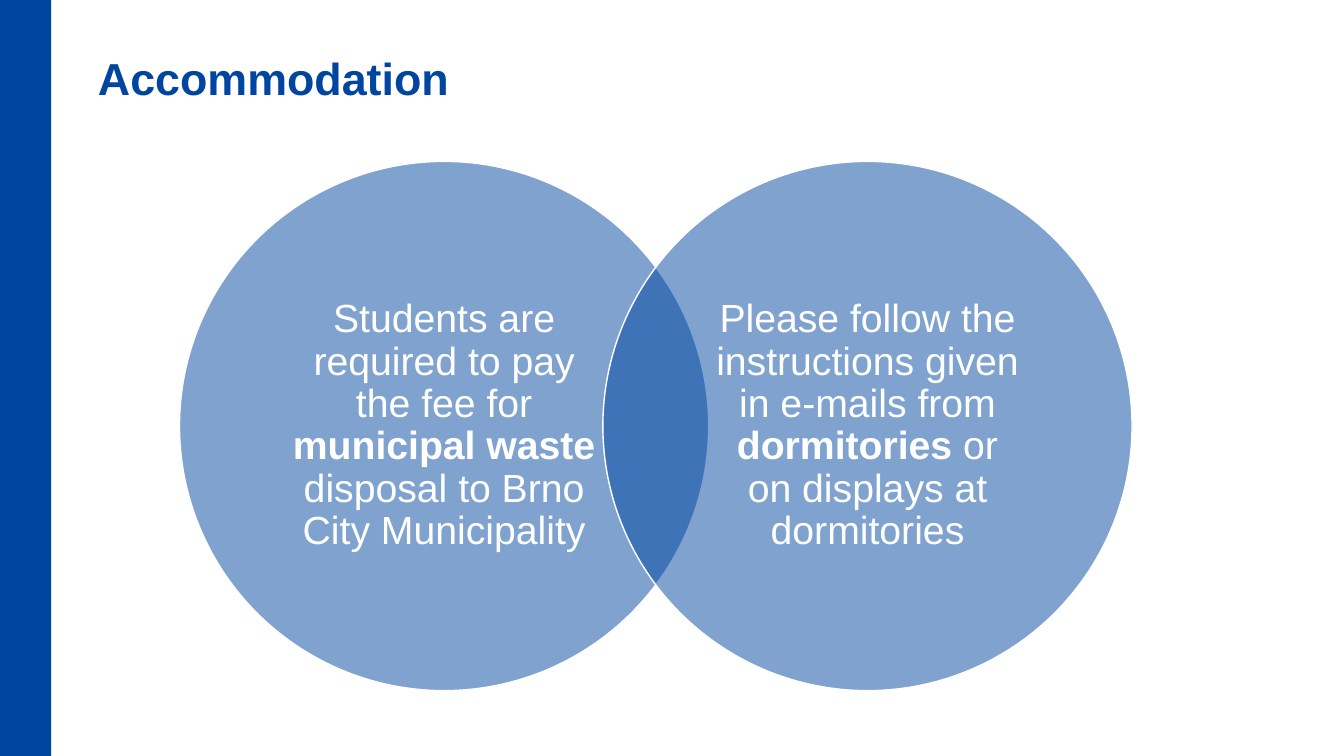
from lxml import etree
from pptx import Presentation
from pptx.dml.color import RGBColor
from pptx.enum.shapes import MSO_SHAPE
from pptx.enum.text import MSO_ANCHOR, PP_ALIGN
from pptx.oxml.ns import qn
from pptx.util import Pt

RECT, OVAL = MSO_SHAPE.RECTANGLE, MSO_SHAPE.OVAL
TOP, MIDDLE = MSO_ANCHOR.TOP, MSO_ANCHOR.MIDDLE
LEFT, CENTER = PP_ALIGN.LEFT, PP_ALIGN.CENTER
BLUE, WHITE = "0046A0", "FFFFFF"

# Venn geometry: each circle starts 80% of a diameter after the last
DIAMETER = 378
STEP = 0.8 * DIAMETER
VENN_LEFT, VENN_TOP = 128.2, 115.3
TEXT_SIZE = 267

# Text runs of each circle: (text, bold)
CIRCLES = [
    [("Students are required to pay the fee for ", False),
     ("municipal waste ", True),
     ("disposal to Brno City Municipality", False)],
    [("Please follow the instructions given in e-mails from ", False),
     ("dormitories ", True),
     ("or on displays at dormitories", False)],
]


def color(value):
    return RGBColor.from_string(value)


def add_shape(s, kind, x, y, w, h, fill, line=None, alpha=None):
    sp = s.shapes.add_shape(kind, Pt(x), Pt(y), Pt(w), Pt(h))
    sp.shadow.inherit = False
    sp.fill.solid()
    sp.fill.fore_color.rgb = color(fill)
    if alpha is not None:
        clr = sp.fill._xPr.find(qn("a:solidFill"))[0]
        etree.SubElement(clr, qn("a:alpha")).set("val", str(alpha * 1000))
    if line:
        sp.line.color.rgb = color(line)
        sp.line.width = Pt(1)
    else:
        sp.line.fill.background()


def add_text(s, x, y, w, h, runs, size, ink, frame, para):
    tf = s.shapes.add_textbox(Pt(x), Pt(y), Pt(w), Pt(h)).text_frame
    for name, value in frame.items():
        setattr(tf, name, value)
    p = tf.paragraphs[0]
    for name, value in para.items():
        setattr(p, name, value)
    for text, bold in runs:
        r = p.add_run()
        r.text = text
        for name, value in {"name": "Arial", "size": Pt(size), "bold": bold}.items():
            setattr(r.font, name, value)
        r.font.color.rgb = color(ink)


def frame_format(anchor, side, top, bottom):
    return {"word_wrap": True, "vertical_anchor": anchor,
            "margin_left": Pt(side), "margin_right": Pt(side),
            "margin_top": Pt(top), "margin_bottom": Pt(bottom)}


def add_circle(s, x, runs):
    add_shape(s, OVAL, x, VENN_TOP, DIAMETER, DIAMETER, BLUE, WHITE, alpha=50)
    inset = (DIAMETER - TEXT_SIZE) / 2
    add_text(s, x + inset, VENN_TOP + inset, TEXT_SIZE, TEXT_SIZE, runs, 28, WHITE,
             frame_format(MIDDLE, 21, 3, 3),
             {"alignment": CENTER, "line_spacing": 0.9})


def main():
    prs = Presentation()
    prs.slide_width, prs.slide_height = Pt(960), Pt(540)
    s = prs.slides.add_slide(prs.slide_layouts[6])

    # Side band
    add_shape(s, RECT, 0, 0, 36.5, 540, BLUE)

    # Title
    add_text(s, 70, 33, 852.5, 49, [("Accommodation", True)], 32, BLUE,
             frame_format(TOP, 0, 3, 0), {"alignment": LEFT})

    # Overlapping circles
    for i, runs in enumerate(CIRCLES):
        add_circle(s, VENN_LEFT + i * STEP, runs)

    prs.save("out.pptx")


if __name__ == "__main__":
    main()
